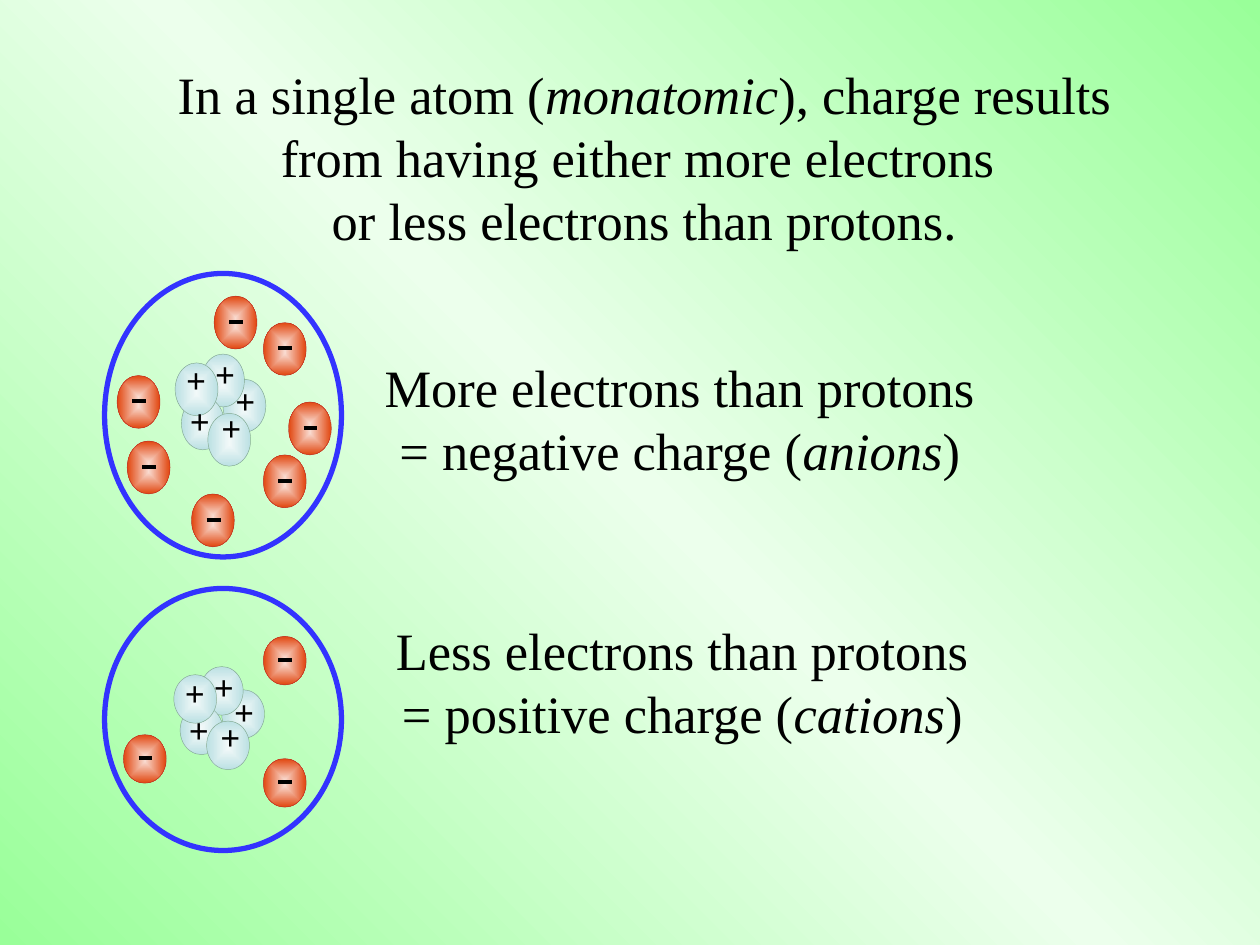
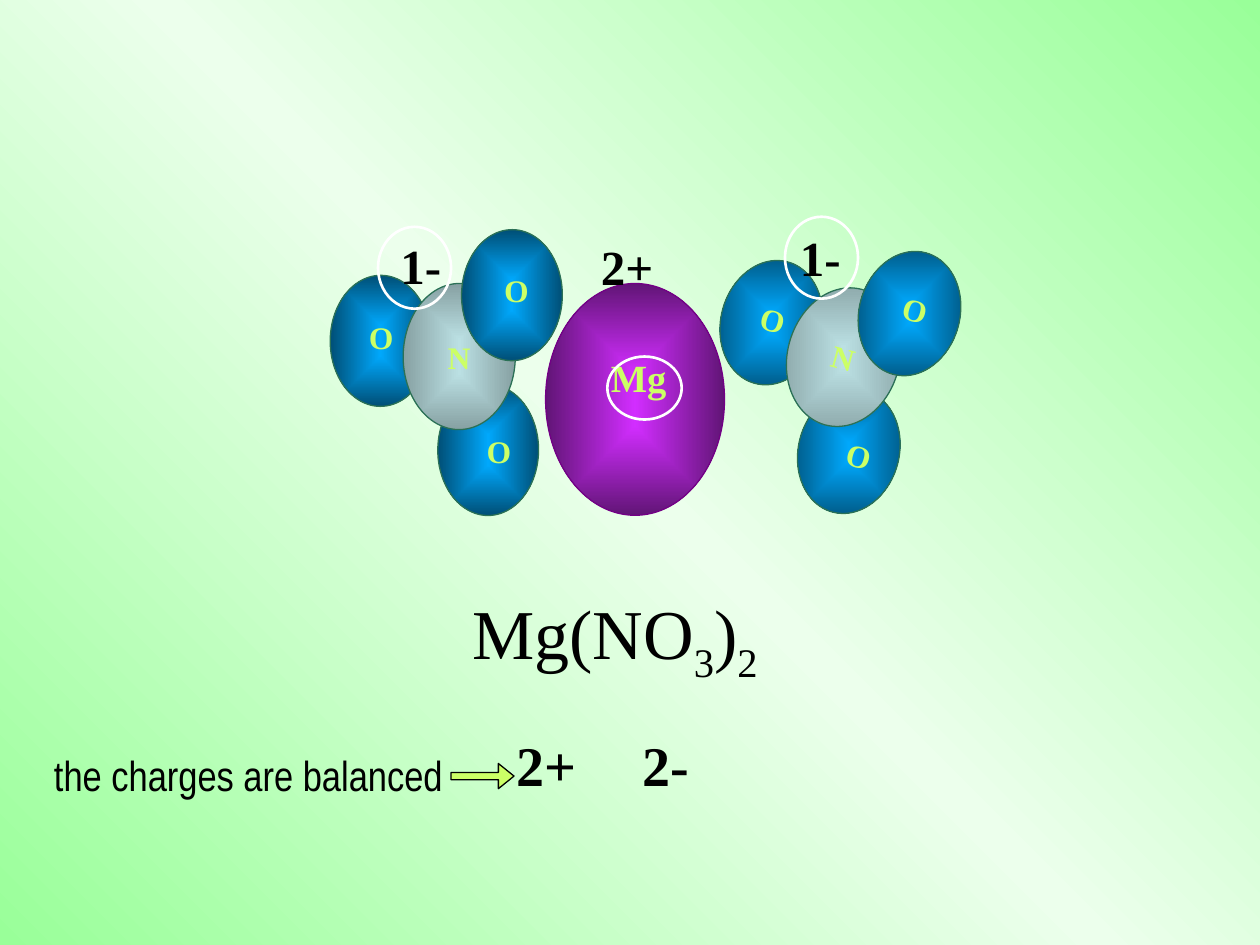
from copy import deepcopy
from math import cos, radians, sin
from lxml import etree
from pptx import Presentation
from pptx.dml.color import RGBColor
from pptx.enum.shapes import MSO_CONNECTOR, MSO_SHAPE
from pptx.enum.text import MSO_ANCHOR, MSO_AUTO_SIZE, PP_ALIGN
from pptx.oxml import parse_xml
from pptx.oxml.ns import nsdecls, qn
from pptx.util import Inches, Pt

OVAL, ARROW = MSO_SHAPE.OVAL, MSO_SHAPE.RIGHT_ARROW
STRAIGHT = MSO_CONNECTOR.STRAIGHT
TOP, MIDDLE = MSO_ANCHOR.TOP, MSO_ANCHOR.MIDDLE
FIT, FIXED = MSO_AUTO_SIZE.SHAPE_TO_FIT_TEXT, MSO_AUTO_SIZE.NONE
LEFT, CENTER = PP_ALIGN.LEFT, PP_ALIGN.CENTER
SERIF, NARROW = "Times New Roman", "Arial Narrow"
rgb = RGBColor.from_string

BLACK, WHITE, LIME, RING = "000000", "FFFFFF", "CCFF66", "3333FF"
GREEN, PALE_GREEN = "99FF99", "ECFFEC"
PROTON, PROTON_EDGE = ("F2F9F9", "BBE0E3"), "83A990"
ELECTRON, ELECTRON_EDGE = ("F9DACF", "E1460F"), "BB3329"
OXYGEN, NITROGEN, NITRATE_EDGE = ("00A8FC", "004E75"), ("BBE0E3", "86A0A2"), "2B7156"
MAGNESIUM, MAGNESIUM_EDGE = ("D22DFF", "611576"), "730086"
CENTRE_PATH = (f'<a:path {nsdecls("a")} path="shape">'
               '<a:fillToRect l="50000" t="50000" r="50000" b="50000"/></a:path>')

prs = Presentation()
prs.slide_width, prs.slide_height = Inches(10), Inches(7.5)
CELL = prs.slide_width // 100


def draw(s, at, edge, width, fill=None, kind=OVAL, turn=0):
    sp = s.shapes.add_shape(kind, *[round(v * CELL) for v in at])
    sp.shadow.inherit = False
    sp.rotation = turn
    sp.line.color.rgb = rgb(edge)
    sp.line.width = Pt(width)
    if fill is None:
        sp.fill.background()
    elif isinstance(fill, str):
        sp.fill.solid()
        sp.fill.fore_color.rgb = rgb(fill)
    else:
        sp.fill.gradient()
        for stop, color in zip(sp.fill.gradient_stops, fill):
            stop.color.rgb = rgb(color)
        lin = sp._element.spPr.find(".//" + qn("a:lin"))
        lin.getparent().replace(lin, parse_xml(CENTRE_PATH))
    return sp


def write(sp, at, lines, size, color=BLACK, bold=False, align=LEFT, font=SERIF, turn=0, grow=True):
    sp.left, sp.top, sp.width, sp.height = [round(v * CELL) for v in at]
    sp.rotation = turn
    tf = sp.text_frame
    tf.word_wrap = False
    tf.auto_size = FIT if grow else FIXED
    tf.vertical_anchor = TOP if grow else MIDDLE
    for i, runs in enumerate(lines):
        p = tf.add_paragraph() if i else tf.paragraphs[0]
        p.alignment = align
        for text, style in runs:
            r = p.add_run()
            r.text = text
            r.font.name, r.font.size = font, Pt(size)
            r.font.bold, r.font.italic = bold, style == "italic"
            r.font.color.rgb = rgb(color)
            if style == "sub":
                r._r.get_or_add_rPr().set("baseline", "-25000")


fill = prs.slide_master.background.fill
fill.gradient()
fill.gradient_angle = 45
first, last = fill.gradient_stops
first.color.rgb = last.color.rgb = rgb(GREEN)
first.position, last.position = 0, 1
stop_list = prs.slide_master._element.find(".//" + qn("a:gsLst"))
stop_list.insert(1, deepcopy(stop_list[0]))
middle = prs.slide_master.background.fill.gradient_stops[1]
middle.position = 0.5
middle.color.rgb = rgb(PALE_GREEN)
title_only = prs.slide_layouts[5]

s = prs.slides.add_slide(title_only)
write(s.shapes.title, (13, 4.4, 76.3, 16), [
    [("In a single atom (", ""), ("monatomic", "italic"), ("), charge results", "")],
    [("from having either more electrons ", "")],
    [("or less electrons than protons.", "")],
], 30, align=CENTER)

protons = [(3.8, 2), (2.1, 0), (0.5, 3.4), (0, 0.7), (2.6, 4.7)]
pluses = [(-0.1, -0.1), (0.2, 3.1), (3.8, 1.5), (2.7, 3.7), (2.2, -0.6)]
atoms = [
    (21.7, 22.5, 13.9, 28.1, 1,
     [(10.1, 35), (20.9, 36.1), (20.9, 25.6), (15.2, 39.2), (17, 23.5), (9.3, 29.8), (22.9, 31.9)],
     (29.5, 27.7, 48.9, 11), "More electrons than protons", "= negative charge (", "anions"),
    (46.7, 20.8, 13.8, 52.9, 0.92,
     [(9.8, 58.3), (20.9, 60.2), (20.9, 50.5)],
     (30.4, 48.6, 47.5, 11), "Less electrons than protons", "= positive charge (", "cations"),
]
for ring_top, ring_height, x, y, squash, electrons, label_at, cause, charge, ion in atoms:
    for dx, dy in protons:
        draw(s, (x + dx, y + dy * squash, 3.4, 4.2 * squash), PROTON_EDGE, 0.25, PROTON)
    for ex, ey in electrons:
        draw(s, (ex, ey, 3.4, 4.2 * squash), ELECTRON_EDGE, 0.25, ELECTRON)
        dash_y = round((ey + 2.05 * squash) * CELL)
        minus = s.shapes.add_connector(STRAIGHT, round((ex + 1.2) * CELL), dash_y,
                                       round((ex + 2.3) * CELL), dash_y)
        minus.line.color.rgb = rgb(BLACK)
        minus.line.width = Pt(2.25)
        etree.SubElement(minus._element.spPr, qn("a:effectLst"))
    draw(s, (8.3, ring_top, 18.8, ring_height), RING, 3)
    for dx, dy in pluses:
        write(s.shapes.add_textbox(0, 0, 0, 0), (x + dx, y + dy * squash, 3.6, 4.3),
              [[("+", "")]], 20, bold=True)
    write(s.shapes.add_textbox(0, 0, 0, 0), label_at,
          [[(cause, "")], [(charge, ""), (ion, "italic"), (")", "")]], 30, align=CENTER)

s = prs.slides.add_slide(title_only)
write(s.shapes.title, (36.5, 46.3, 25.2, 7.7),
      [[("Mg(NO", ""), ("3", "sub"), (")", ""), ("2", "sub")]], 40)

ball_parts = [
    (-6.25, -1.2, 8, 10.4, OXYGEN),
    (2.35, 7.4, 8, 10.4, OXYGEN),
    (0, 0, 8.9, 11.6, NITROGEN),
    (4.15, -4.9, 8, 10.4, OXYGEN),
]
oxygen_labels = [(-6.15, -1.5), (3.25, 7.5), (4.55, -5.3)]
for cx, cy, turn, squash in [(66.95, 28.35, 15.1, 0.96), (36.45, 28.3, 0.4, 1)]:
    c, n = cos(radians(turn)), sin(radians(turn))
    for dx, dy, w, h, color in ball_parts:
        dy, h = dy * squash, h * squash
        at = (cx + dx * c - dy * n - w / 2, cy + dx * n + dy * c - h / 2, w, h)
        ball = draw(s, at, NITRATE_EDGE, 0.75, color, turn=turn)
        if color == NITROGEN:
            write(ball, at, [[("N", "")]], 18, LIME, True, CENTER, turn=turn, grow=False)
    for dx, dy in oxygen_labels:
        dy *= squash
        write(s.shapes.add_textbox(0, 0, 0, 0),
              (cx + dx * c - dy * n - 2, cy + dx * n + dy * c - 2, 4, 4),
              [[("O", "")]], 18, LIME, True, turn=turn)

draw(s, (43.3, 22.5, 14.2, 18.4), MAGNESIUM_EDGE, 0.75, MAGNESIUM)
for text, at, size, color in [
    ("Mg", (47.5, 27.6, 6.4, 4.7), 22, LIME),
    ("2+", (46.7, 18.3, 6.2, 5.7), 28, BLACK),
    ("1-", (62.5, 17.6, 5.3, 5.7), 28, BLACK),
    ("1-", (30.8, 18.2, 5.3, 5.7), 28, BLACK),
    ("2+", (40, 57.5, 6.8, 6.3), 32, BLACK),
    ("2-", (50, 57.5, 5.7, 6.3), 32, BLACK),
]:
    write(s.shapes.add_textbox(0, 0, 0, 0), at, [[(text, "")]], size, color, True)
for at in [(30, 18, 5.8, 6.5), (62.3, 17.2, 5.8, 6.5), (48.2, 28.3, 5.9, 5)]:
    draw(s, at, WHITE, 1.5)

write(s.shapes.add_textbox(0, 0, 0, 0), (3.3, 59, 33, 5),
      [[("the charges are balanced", "")]], 24, font=NARROW)
arrow = draw(s, (35.8, 60.6, 5, 2), BLACK, 0.75, LIME, ARROW)
arrow.adjustments[0], arrow.adjustments[1] = 0.29, 0.62

prs.save("out.pptx")
